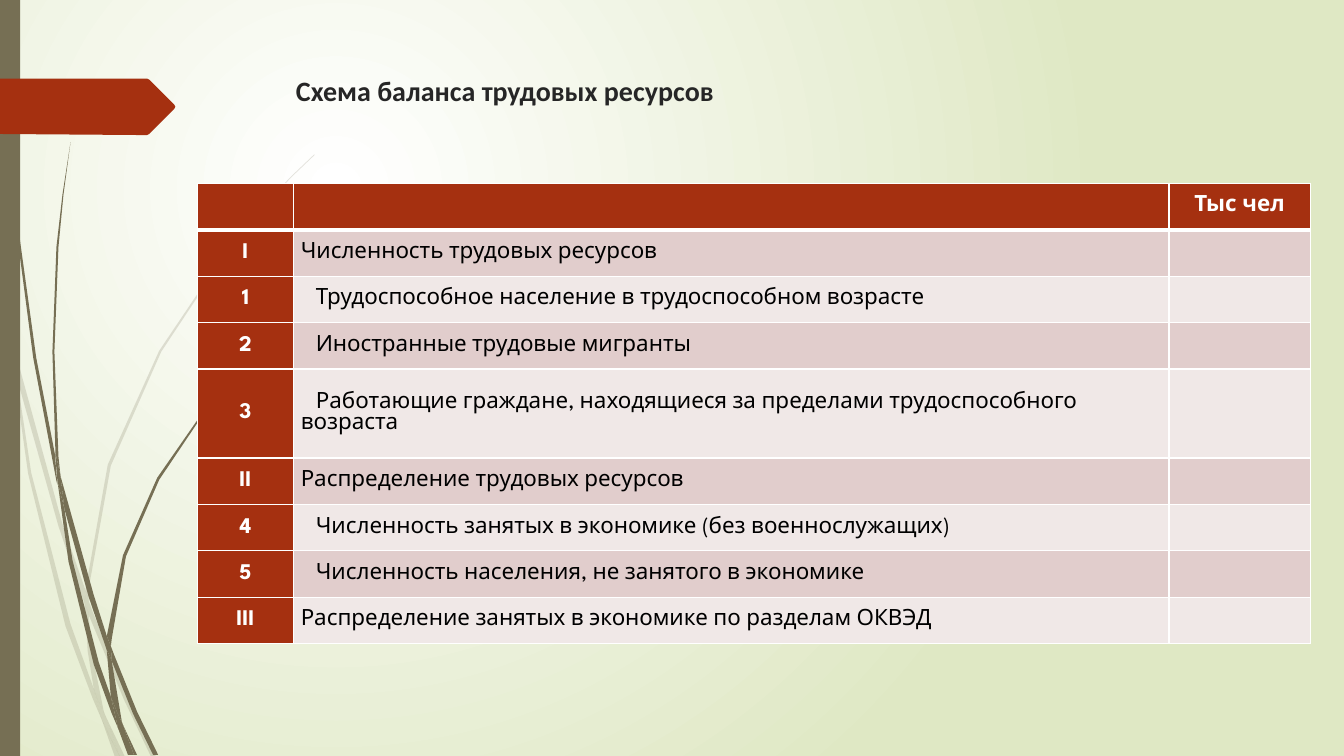
from lxml.etree import SubElement
from pptx import Presentation
from pptx.dml.color import RGBColor
from pptx.enum.shapes import MSO_SHAPE
from pptx.enum.text import MSO_ANCHOR, PP_ALIGN
from pptx.oxml.ns import qn
from pptx.util import Cm, Pt

COLORS = {
    "white": "FFFFFF", "meadow": "DFE8C4", "olive": "766F54", "rust": "A53010",
    "title": "262626", "black": "000000", "band_dark": "E1CDCC", "band_light": "F0E8E7",
}
GRID = Cm(0.0254)


def color(name):
    return RGBColor.from_string(COLORS[name])


def add_outline(shapes, points, fill_name):
    """Add a closed, filled outline whose points are counted on the fine grid."""
    outline = [(x * GRID, y * GRID) for x, y in points]
    builder = shapes.build_freeform(*outline[0])
    builder.add_line_segments(outline[1:])
    shape = builder.convert_to_shape()
    shape.shadow.inherit = False
    shape.fill.solid()
    shape.fill.fore_color.rgb = color(fill_name)
    shape.line.fill.background()
    return shape


presentation = Presentation()
presentation.slide_width = Cm(33.87)
presentation.slide_height = Cm(19.05)
slide = presentation.slides.add_slide(presentation.slide_layouts[6])

# Background: radial gradient centred in the upper left quarter
background = slide.background.fill
background.gradient()
for stop, name in zip(background.gradient_stops, ("white", "meadow")):
    stop.color.rgb = color(name)
gradient = slide.background._cSld.find(".//" + qn("a:gradFill"))
gradient.remove(gradient.find(qn("a:lin")))
radial = SubElement(gradient, qn("a:path"), path="circle")
SubElement(radial, qn("a:fillToRect"), l="50000", t="50000", r="100000", b="100000")

# Grass: each blade is made of several pieces that meet edge to edge
pale_grass = [
    [(11, 350), (9, 322), (0, 282), (0, 299), (10, 344)],
    [(58, 522), (84, 599), (85, 586), (62, 520), (14, 345), (17, 376)],
    [(92, 607), (88, 596), (88, 610), (123, 694), (150, 751), (155, 751), (127, 692)],
    [(119, 751), (124, 751), (105, 711)],
    [(93, 683), (70, 619), (31, 469), (17, 376), (11, 350), (28, 470), (65, 621),
     (92, 693), (101, 714), (99, 707)],
    [(84, 599), (87, 646), (93, 683), (96, 692), (105, 711), (103, 706), (91, 646),
     (88, 610), (88, 608)],
    [(88, 584), (110, 462), (160, 349), (229, 245), (268, 198), (290, 175), (312, 154),
     (312, 153), (289, 175), (268, 197), (228, 244), (158, 348), (107, 461), (85, 584),
     (85, 586), (88, 596)],
    [(101, 714), (114, 751), (119, 751)],
    [(88, 608), (88, 610), (88, 596), (85, 586), (84, 599)],
    [(96, 692), (93, 683), (99, 707), (101, 714), (119, 751), (105, 711)],
]
dark_grass = [
    [(7, 110), (17, 233), (33, 355), (56, 477), (57, 481), (55, 457), (55, 453),
     (36, 355), (19, 232), (8, 109), (5, 48), (4, 0), (3, 0), (4, 48)],
    [(88, 592), (106, 645), (106, 633), (106, 631), (93, 590), (60, 472), (64, 505)],
    [(113, 649), (110, 641), (111, 656), (132, 708), (152, 749), (157, 749), (136, 706)],
    [(110, 691), (98, 657), (72, 556), (64, 505), (57, 477), (68, 557), (93, 659),
     (111, 708), (117, 722), (116, 717)],
    [(60, 472), (58, 453), (54, 349), (58, 245), (63, 193), (70, 141), (62, 193),
     (56, 245), (52, 349), (55, 449)],
    [(133, 749), (136, 749), (122, 719)],
    [(57, 477), (64, 505), (60, 472), (55, 449), (55, 453)],
    [(111, 633), (125, 552), (158, 476), (205, 406), (231, 374), (245, 359), (261, 344),
     (260, 344), (245, 358), (231, 373), (204, 405), (156, 474), (122, 551), (106, 631),
     (110, 641)],
    [(117, 722), (127, 749), (131, 749)],
    [(106, 645), (110, 691), (116, 706), (122, 719), (121, 716), (111, 656), (109, 651)],
    [(106, 645), (109, 651), (111, 656), (110, 641), (106, 631), (106, 633)],
    [(116, 706), (110, 691), (116, 717), (117, 722), (130, 749), (133, 749), (122, 719)],
]
for pieces, opacity in ((pale_grass, 20), (dark_grass, 100)):
    grass = slide.shapes.add_group_shape()
    for piece in pieces:
        blade = add_outline(grass.shapes, piece, "olive")
        if opacity < 100:
            tint = blade.fill._xPr.find(".//" + qn("a:srgbClr"))
            SubElement(tint, qn("a:alpha"), val=str(opacity * 1000))

side_bar = slide.shapes.add_shape(MSO_SHAPE.RECTANGLE, 0, 0, Cm(0.51), Cm(19.05))
side_bar.shadow.inherit = False
side_bar.fill.solid()
side_bar.fill.fore_color.rgb = color("olive")
side_bar.line.fill.background()

arrow_tab = [(0, 78), (146, 78), (148, 79), (173, 104), (174, 106), (173, 108),
             (148, 133), (146, 134), (136, 134), (0, 133)]
add_outline(slide.shapes, arrow_tab, "rust")

title = slide.shapes.add_textbox(Cm(7.21), Cm(1.73), Cm(24.77), Cm(3.56))
title.text_frame.word_wrap = True
title.text_frame.text = "Схема баланса трудовых ресурсов"
title_font = title.text_frame.paragraphs[0].runs[0].font
title_font.name = "Calibri"
title_font.size = Pt(20)
title_font.bold = True
title_font.color.rgb = color("title")

# Balance table: numbered rows are indented under the Roman sections
rows = [
    ("", "", "Тыс чел"),
    ("I", "Численность трудовых ресурсов", ""),
    ("1", "Трудоспособное население в трудоспособном возрасте", ""),
    ("2", "Иностранные трудовые мигранты", ""),
    ("3", "Работающие граждане, находящиеся за пределами трудоспособного возраста", ""),
    ("II", "Распределение трудовых ресурсов", ""),
    ("4", "Численность занятых в экономике (без военнослужащих)", ""),
    ("5", "Численность населения, не занятого в экономике", ""),
    ("III", "Распределение занятых в экономике по разделам ОКВЭД", ""),
]
table = slide.shapes.add_table(
    len(rows), 3, Cm(4.98), Cm(4.62), Cm(28.04), Cm(11.63)).table
table.horz_banding = False
for column, width in zip(table.columns, (2.41, 22.07, 3.56)):
    column.width = Cm(width)

for row_index, texts in enumerate(rows):
    table.rows[row_index].height = Cm(2.24 if texts[0] == "3" else 1.17)
    for column_index, text in enumerate(texts):
        cell = table.cell(row_index, column_index)
        heading = row_index == 0 or column_index == 0
        thick_side = {0: "lnB", 1: "lnT"}.get(row_index)
        properties = cell._tc.get_or_add_tcPr()
        for side in ("lnL", "lnR", "lnT", "lnB"):
            border = SubElement(
                properties, qn("a:" + side), w=str(Pt(3 if side == thick_side else 1)))
            border_fill = SubElement(border, qn("a:solidFill"))
            SubElement(border_fill, qn("a:srgbClr"), val=COLORS["white"])
        cell.fill.solid()
        band = "band_dark" if row_index % 2 else "band_light"
        cell.fill.fore_color.rgb = color("rust" if heading else band)
        if not text:
            continue
        cell.vertical_anchor = MSO_ANCHOR.MIDDLE
        cell.margin_left = cell.margin_right = Cm(0.19)
        cell.margin_top = cell.margin_bottom = 0
        cell.text_frame.text = text
        paragraph = cell.text_frame.paragraphs[0]
        paragraph.alignment = PP_ALIGN.CENTER if heading else PP_ALIGN.LEFT
        if not heading and texts[0].isdigit():
            paragraph._p.get_or_add_pPr().set("indent", str(Cm(0.38)))
        font = paragraph.runs[0].font
        font.name = "League Spartan"
        font.size = Pt(16)
        font.bold = heading
        font.color.rgb = color("white" if heading else "black")

presentation.save("out.pptx")
